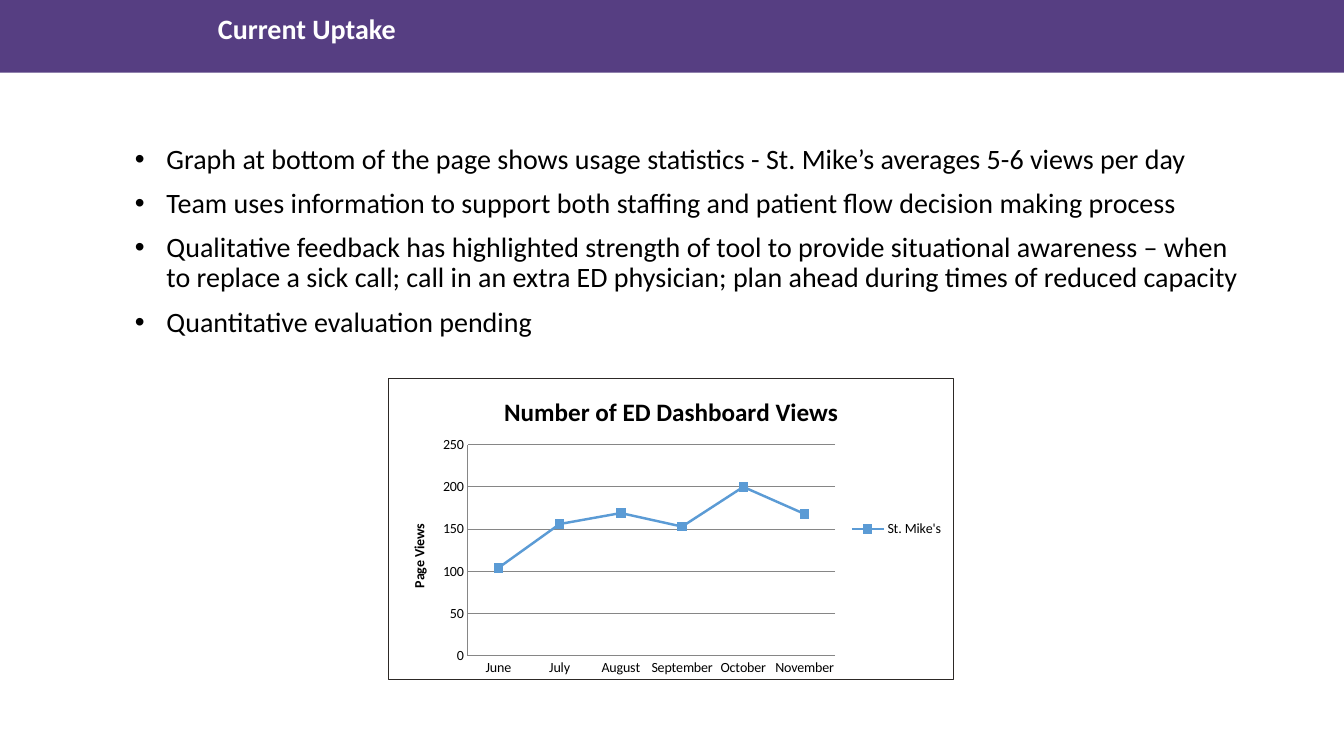
from pptx import Presentation
from pptx.chart.data import CategoryChartData
from pptx.dml.color import RGBColor
from pptx.enum.chart import XL_CHART_TYPE as ChartType, XL_LEGEND_POSITION as LegendPosition
from pptx.enum.chart import XL_MARKER_STYLE as MarkerStyle, XL_TICK_MARK as TickMark
from pptx.enum.shapes import MSO_SHAPE as ShapeKind
from pptx.enum.text import MSO_ANCHOR as Anchor, MSO_AUTO_SIZE as AutoSize, PP_ALIGN as Align
from pptx.oxml import parse_xml
from pptx.oxml.ns import nsdecls
from pptx.util import Pt

TITLE = "Current Uptake"
BULLETS = [
    "Graph at bottom of the page shows usage statistics - St. Mike’s averages 5-6 views per day",
    "Team uses information to support both staffing and patient flow decision making process",
    "Qualitative feedback has highlighted strength of tool to provide situational awareness – when "
    "to replace a sick call; call in an extra ED physician; plan ahead during times of reduced capacity",
    "Quantitative evaluation pending",
]
CHART_TITLE = "Number of ED Dashboard Views"
VALUE_TITLE = "Page Views"
SERIES = "St. Mike's"
VIEWS = {"June": 104, "July": 156, "August": 169, "September": 153, "October": 200, "November": 168}

FONT = "Calibri"
PURPLE, WHITE, BLACK = "563E82", "FFFFFF", "000000"
BLUE, GREY, BORDER = "5B9BD5", "868686", "2D2926"
SLIDE = (960, 540)
BAR_AT = (-1.5, -1.5, 963, 53.5)
TITLE_AT = (148.5, 7.2, 239, 42.5)
BODY_AT = (89.3, 100, 816, 392)
CHART_AT = (277.2, 270, 404.6, 216)
PLOT = {"x": 0.14, "y": 0.22, "w": 0.65, "h": 0.7}
INDENT = 22.5


def color(value):
    return RGBColor.from_string(value)


def lengths(values):
    return [Pt(value) for value in values]


def set_all(target, formats):
    for name, value in formats.items():
        setattr(target, name, value)


def style_font(font, size, shade=BLACK, bold=False):
    set_all(font, {"name": FONT, "size": Pt(size), "bold": bold})
    font.color.rgb = color(shade)


def style_line(line, shade, width):
    line.color.rgb = color(shade)
    line.width = Pt(width)


def prepare_frame(box):
    set_all(box.text_frame, {"word_wrap": True, "auto_size": AutoSize.NONE, "vertical_anchor": Anchor.TOP})
    return box.text_frame


def add_bar(page):
    bar = page.shapes.add_shape(ShapeKind.RECTANGLE, *lengths(BAR_AT))
    bar.shadow.inherit = False
    bar.fill.solid()
    bar.fill.fore_color.rgb = color(PURPLE)
    bar.line.fill.background()
    page.shapes.title._element.addprevious(bar._element)


def fill_title(page):
    title = page.shapes.title
    set_all(title, dict(zip(("left", "top", "width", "height"), lengths(TITLE_AT))))
    para = prepare_frame(title).paragraphs[0]
    para.text = TITLE
    set_all(para, {"alignment": Align.LEFT, "line_spacing": 0.9})
    style_font(para.font, 20, WHITE, True)


def add_bullets(page):
    frame = prepare_frame(page.shapes.add_textbox(*lengths(BODY_AT)))
    for index, text in enumerate(BULLETS):
        para = frame.add_paragraph() if index else frame.paragraphs[0]
        para.text = text
        set_all(para, {"line_spacing": 0.9, "space_before": Pt(10 if index else 0)})
        props = para._p.get_or_add_pPr()
        props.set("marL", str(Pt(INDENT)))
        props.set("indent", str(-Pt(INDENT)))
        props.append(parse_xml(f'<a:buFont {nsdecls("a")} typeface="Arial"/>'))
        props.append(parse_xml(f'<a:buChar {nsdecls("a")} char="•"/>'))
        style_font(para.font, 20)


def set_title(owner, text, size):
    frame = (owner.chart_title if hasattr(owner, "chart_title") else owner.axis_title).text_frame
    frame.text = text
    style_font(frame.paragraphs[0].runs[0].font, size, bold=True)


def place_plot(chart):
    area = chart._chartSpace.chart.plotArea
    for old in area.xpath("./c:layout"):
        area.remove(old)
    parts = "".join(f'<c:{name} val="{value}"/>' for name, value in PLOT.items())
    area.insert(0, parse_xml(
        f'<c:layout {nsdecls("c")}><c:manualLayout><c:layoutTarget val="inner"/>'
        f'<c:xMode val="edge"/><c:yMode val="edge"/>{parts}</c:manualLayout></c:layout>'))


def add_border(chart):
    chart._chartSpace.chart.addnext(parse_xml(
        f'<c:spPr {nsdecls("c", "a")}><a:solidFill><a:srgbClr val="{WHITE}"/></a:solidFill>'
        f'<a:ln w="{Pt(0.75)}"><a:solidFill><a:srgbClr val="{BORDER}"/></a:solidFill></a:ln></c:spPr>'))


def add_views_chart(page):
    data = CategoryChartData()
    data.categories = list(VIEWS)
    data.add_series(SERIES, list(VIEWS.values()))
    chart = page.shapes.add_chart(ChartType.LINE_MARKERS, *lengths(CHART_AT), data).chart
    style_font(chart.font, 10)
    set_title(chart, CHART_TITLE, 18)
    set_title(chart.value_axis, VALUE_TITLE, 10)
    chart.has_legend = True
    set_all(chart.legend, {"position": LegendPosition.RIGHT, "include_in_layout": False})
    for axis in (chart.category_axis, chart.value_axis):
        set_all(axis, {"major_tick_mark": TickMark.NONE, "minor_tick_mark": TickMark.NONE})
        style_line(axis.format.line, GREY, 0.75)
    set_all(chart.value_axis, {"minimum_scale": 0, "maximum_scale": 250, "major_unit": 50})
    style_line(chart.value_axis.major_gridlines.format.line, GREY, 0.75)
    chart.plots[0].vary_by_categories = False
    series = chart.plots[0].series[0]
    series.smooth = False
    style_line(series.format.line, BLUE, 1.75)
    set_all(series.marker, {"style": MarkerStyle.SQUARE, "size": 6})
    series.marker.format.fill.solid()
    series.marker.format.fill.fore_color.rgb = color(BLUE)
    style_line(series.marker.format.line, BLUE, 0.75)
    place_plot(chart)
    add_border(chart)


def main():
    deck = Presentation()
    deck.slide_width, deck.slide_height = lengths(SLIDE)
    page = deck.slides.add_slide(deck.slide_layouts[5])
    add_bar(page)
    fill_title(page)
    add_bullets(page)
    add_views_chart(page)
    deck.save("out.pptx")


if __name__ == "__main__":
    main()
